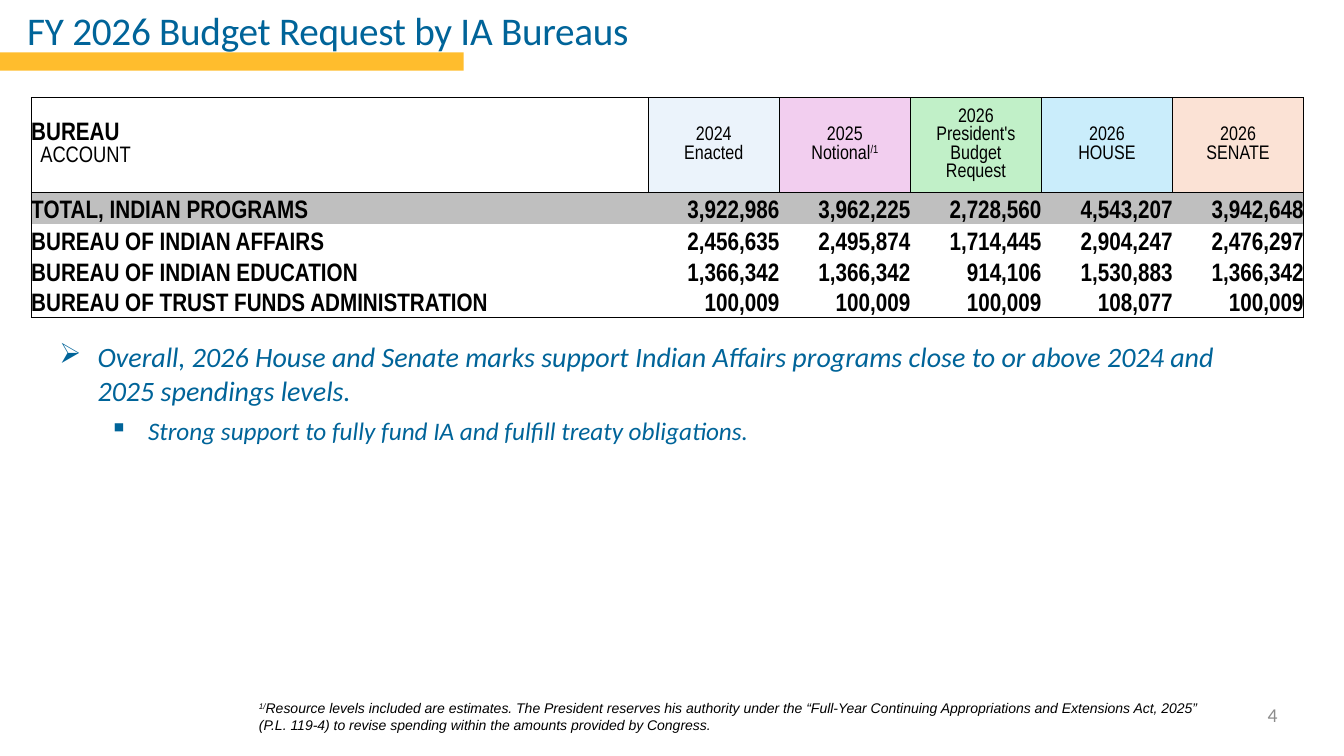
from pptx import Presentation
from pptx.dml.color import RGBColor
from pptx.enum.shapes import MSO_SHAPE as Preset
from pptx.enum.text import MSO_ANCHOR as Anchor, PP_ALIGN as Align
from pptx.oxml.xmlchemy import OxmlElement as Element
from pptx.util import Emu, Pt

BLACK = RGBColor(0x00, 0x00, 0x00)
BLUE = RGBColor(0x00, 0x64, 0x99)
GOLD = RGBColor(0xFF, 0xBD, 0x2D)
PAGE_GRAY = RGBColor(0x8C, 0x8C, 0x8C)
TOTAL_GRAY = RGBColor(0xBF, 0xBF, 0xBF)
ENACTED = RGBColor(0xEB, 0xF3, 0xFB)
NOTIONAL = RGBColor(0xF2, 0xCE, 0xEF)
REQUEST = RGBColor(0xC1, 0xF0, 0xC8)
HOUSE = RGBColor(0xCA, 0xED, 0xFB)
SENATE = RGBColor(0xFB, 0xE2, 0xD5)

LEVELS = [
    ("2024\nEnacted", "", ENACTED),
    ("2025\nNotional", "/1", NOTIONAL),
    ("2026\nPresident's\nBudget\nRequest", "", REQUEST),
    ("2026\nHOUSE", "", HOUSE),
    ("2026\nSENATE", "", SENATE),
]
BUREAUS = [
    ("TOTAL, INDIAN PROGRAMS", "3,922,986", "3,962,225", "2,728,560", "4,543,207", "3,942,648"),
    ("BUREAU OF INDIAN AFFAIRS", "2,456,635", "2,495,874", "1,714,445", "2,904,247", "2,476,297"),
    ("BUREAU OF INDIAN EDUCATION", "1,366,342", "1,366,342", "914,106", "1,530,883", "1,366,342"),
    ("BUREAU OF TRUST FUNDS ADMINISTRATION", "100,009", "100,009", "100,009", "108,077", "100,009"),
]
COLUMN_WIDTHS = [612] + [130] * len(LEVELS)
ROW_HEIGHTS = [93, 32, 31, 31, 30]


def px(length):
    return Emu(length * 9144)


class BudgetSlide:
    def __init__(self, deck):
        self.slide = deck.slides.add_slide(deck.slide_layouts[6])
        self.shapes = self.slide.shapes

    def bar(self, left, top, width, height, color):
        bar = self.shapes.add_shape(Preset.RECTANGLE, px(left), px(top), px(width), px(height))
        bar.shadow.inherit = False
        bar.fill.solid()
        bar.fill.fore_color.rgb = color
        bar.line.fill.background()

    def text_frame(self, left, top, width, height, insets=(10, 5)):
        frame = self.shapes.add_textbox(px(left), px(top), px(width), px(height)).text_frame
        frame.word_wrap = True
        frame.margin_left = frame.margin_right = px(insets[0])
        frame.margin_top = frame.margin_bottom = px(insets[1])
        return frame

    def add_text(self, paragraph, text, size, color=BLACK, face="Arial Narrow",
                 bold=False, italic=False, raised=False, tracking=0):
        for index, line in enumerate(text.split("\n")):
            if index:
                paragraph.add_line_break()
            run = paragraph.add_run()
            run.text = line
            font = run.font
            font.name, font.size, font.bold, font.italic = face, Pt(size), bold, italic
            font.color.rgb = color
            properties = run._r.get_or_add_rPr()
            if raised:
                properties.set("baseline", "30000")
            if tracking:
                properties.set("spc", str(tracking))

    def indent(self, paragraph, margin, hanging=0, bullet=None):
        properties = paragraph._p.get_or_add_pPr()
        properties.set("marL", str(px(margin)))
        properties.set("indent", str(px(-hanging)))
        if bullet:
            mark = Element("a:buChar")
            mark.set("char", bullet)
            properties.append(mark)

    def table(self, left, top, widths, heights):
        table = self.shapes.add_table(len(heights), len(widths), px(left), px(top),
                                      px(sum(widths)), px(sum(heights))).table
        table.first_row = table.horz_banding = False
        for column, width in zip(table.columns, widths):
            column.width = px(width)
        for row, height in zip(table.rows, heights):
            row.height = px(height)
        return table

    def cell(self, cell, sides, fill, anchor, align):
        cell.margin_left = cell.margin_right = cell.margin_top = cell.margin_bottom = 0
        cell.vertical_anchor = anchor
        properties = cell._tc.get_or_add_tcPr()
        for side in "LRTB":
            border = Element(f"a:ln{side}")
            border.set("w", str(Pt(0.5)))
            if side in sides:
                ink = Element("a:solidFill")
                color = Element("a:srgbClr")
                color.set("val", str(BLACK))
                ink.append(color)
            else:
                ink = Element("a:noFill")
            border.append(ink)
            properties.append(border)
        if fill is None:
            cell.fill.background()
        else:
            cell.fill.solid()
            cell.fill.fore_color.rgb = fill
        paragraph = cell.text_frame.paragraphs[0]
        paragraph.alignment = align
        return paragraph

    def budget_table(self):
        table = self.table(31, 97, COLUMN_WIDTHS, ROW_HEIGHTS)
        corner = table.cell(0, 0)
        bureau = self.cell(corner, "LRTB", None, Anchor.MIDDLE, Align.LEFT)
        self.add_text(bureau, "BUREAU", 18, bold=True)
        account = corner.text_frame.add_paragraph()
        self.indent(account, 9)
        self.add_text(account, "ACCOUNT", 16)

        for column, (level, note, tint) in enumerate(LEVELS, 1):
            heading = self.cell(table.cell(0, column), "LRTB", tint, Anchor.MIDDLE, Align.CENTER)
            self.add_text(heading, level, 14)
            if note:
                self.add_text(heading, note, 14, raised=True)

        for row, amounts in enumerate(BUREAUS, 1):
            fill = TOTAL_GRAY if row == 1 else None
            for column, amount in enumerate(amounts):
                sides = (("L" if column == 0 else "") + ("R" if column == len(LEVELS) else "")
                         + ("T" if row == 1 else "") + ("B" if row == len(BUREAUS) else ""))
                align = Align.RIGHT if column else Align.LEFT
                entry = self.cell(table.cell(row, column), sides, fill, Anchor.BOTTOM, align)
                self.add_text(entry, amount, 18, bold=True)

    def takeaways(self, left, top, width, height, points):
        frame = self.text_frame(left, top, width, height)
        for level, (bullet, margin, size, text) in enumerate(points):
            point = frame.add_paragraph() if level else frame.paragraphs[0]
            point.level = level
            self.indent(point, margin, 38, bullet)
            point.space_after = Pt(6)
            self.add_text(point, text, size, BLUE, "Calibri", italic=True)


def main():
    deck = Presentation()
    deck.slide_width, deck.slide_height = px(1333), px(750)
    page = BudgetSlide(deck)

    page.bar(0, 52, 460, 18, GOLD)

    page_number = page.text_frame(960, 697, 307, 24, (0, 0)).paragraphs[0]
    page_number.alignment = Align.RIGHT
    page.add_text(page_number, "4", 14, PAGE_GRAY, "Calibri")

    title = page.text_frame(27, 5, 883, 49, (0, 1)).paragraphs[0]
    page.add_text(title, "FY 2026 Budget Request by IA Bureaus", 28, BLUE, "Calibri", tracking=-20)

    page.budget_table()

    footnote = page.text_frame(247, 689, 971, 44).paragraphs[0]
    page.add_text(footnote, "1/", 10, face="Arial", italic=True, raised=True)
    page.add_text(footnote, "Resource levels included are estimates. The President reserves his authority "
                  "under the “Full-Year Continuing Appropriations and Extensions Act, 2025” (P.L. 119-4) "
                  "to revise spending within the amounts provided by Congress.",
                  10, face="Arial", italic=True)

    page.takeaways(49, 332, 1223, 116, [
        ("➢", 38, 20, "Overall, 2026 House and Senate marks support Indian Affairs programs "
         "close to or above 2024 and 2025 spendings levels."),
        ("▪", 88, 18, "Strong support to fully fund IA and fulfill treaty obligations."),
    ])

    deck.save("out.pptx")


if __name__ == "__main__":
    main()
